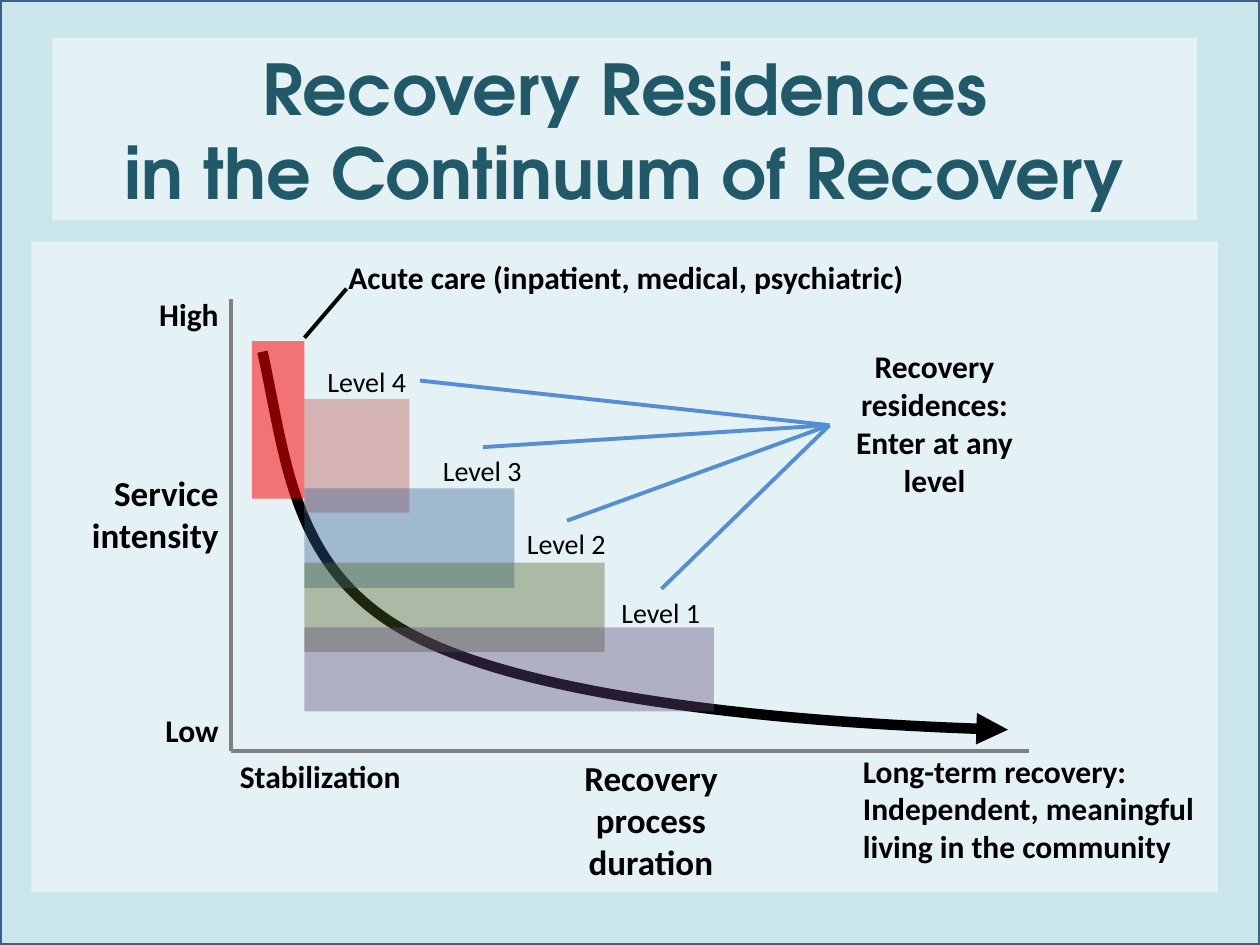
from dataclasses import dataclass

from lxml import etree
from pptx import Presentation
from pptx.dml.color import RGBColor
from pptx.enum.dml import MSO_FILL
from pptx.enum.shapes import MSO_CONNECTOR, MSO_SHAPE
from pptx.enum.text import MSO_ANCHOR, MSO_AUTO_SIZE, PP_ALIGN
from pptx.oxml.ns import qn
from pptx.util import Pt

LEFT, CENTER, RIGHT = PP_ALIGN.LEFT, PP_ALIGN.CENTER, PP_ALIGN.RIGHT
RECTANGLE, STRAIGHT = MSO_SHAPE.RECTANGLE, MSO_CONNECTOR.STRAIGHT
TITLE_ONLY_LAYOUT = 5
LEFT_SIDE = 1


@dataclass(frozen=True)
class Theme:
    title_font: str = "TeX Gyre Adventor"
    body_font: str = "Calibri"
    title_size: float = 40
    axis_size: float = 20
    label_size: float = 18
    level_size: float = 16
    background: str = "CAE6EB"
    frame: str = "3A5F8C"
    panel: str = "FFFFFF"
    title: str = "215968"
    text: str = "000000"
    axis: str = "808080"
    callout: str = "558ED5"
    acute: str = "FF0000"
    panel_opacity: int = 50
    bar_opacity: int = 39
    acute_opacity: int = 52
    line_width: float = 2.25
    curve_width: float = 6


@dataclass(frozen=True)
class Box:
    left: float
    top: float
    width: float
    height: float

    def lengths(self) -> tuple:
        return Pt(self.left), Pt(self.top), Pt(self.width), Pt(self.height)


@dataclass(frozen=True)
class Level:
    name: str
    color: str
    top: float
    width: float
    height: float
    label_at: tuple[float, float]
    callout_to: tuple[float, float]


@dataclass(frozen=True)
class Label:
    text: str
    box: Box
    align: PP_ALIGN
    size: float


THEME = Theme()
BARS_LEFT = 174
AXIS_X, AXIS_Y = 132, 429
HUB = (474, 243)
LEVELS = [
    Level("Level 4", "C0504D", 228, 60, 65, (180, 204.5), (240, 217.5)),
    Level("Level 3", "376092", 279, 120, 57, (246, 255.5), (276, 255.5)),
    Level("Level 2", "4F6228", 321.5, 171.5, 51, (294, 297.5), (324, 297.5)),
    Level("Level 1", "604A7B", 358.5, 234, 48, (348, 336.5), (378, 336.5)),
]
LABELS = [
    Label("Long-term recovery:\nIndependent, meaningful living in the community",
          Box(486, 426, 204, 73), LEFT, THEME.label_size),
    Label("Service intensity", Box(36, 266, 96, 55), RIGHT, THEME.axis_size),
    Label("Recovery process duration", Box(300, AXIS_Y, 144, 80), CENTER, THEME.axis_size),
    Label("High", Box(78, 165, 54, 29), RIGHT, THEME.label_size),
    Label("Low", Box(78, 403, 54, 29), RIGHT, THEME.label_size),
    Label("Stabilization", Box(126, AXIS_Y, 114, 29), CENTER, THEME.label_size),
    Label("Acute care (inpatient, medical, psychiatric)",
          Box(192, 144, 354, 29), LEFT, THEME.label_size),
]
# Start point, then two control points and an end point per Bézier segment
CURVE = [(150, 201), (164, 265), (167, 328), (238, 364),
         (309, 400), (466, 414), (576, 417)]


def rgb(color: str) -> RGBColor:
    return RGBColor.from_string(color)


def fill_translucent(shape, color: str, opacity: int) -> None:
    shape.fill.solid()
    shape.fill.fore_color.rgb = rgb(color)
    color_element = shape.fill._xPr.find(qn("a:solidFill"))[0]
    etree.SubElement(color_element, qn("a:alpha")).set("val", str(opacity * 1000))


def add_block(slide, box: Box, color: str, opacity: int) -> None:
    block = slide.shapes.add_shape(RECTANGLE, *box.lengths())
    block.shadow.inherit = False
    block.line.fill.background()
    fill_translucent(block, color, opacity)


def write(frame, text: str, *, size: float, align=LEFT, bold=True,
          font=THEME.body_font, color=THEME.text) -> None:
    frame.word_wrap = True
    frame.text = text
    for paragraph in frame.paragraphs:
        paragraph.alignment = align
        paragraph.font.name = font
        paragraph.font.size = Pt(size)
        paragraph.font.bold = bold
        paragraph.font.color.rgb = rgb(color)


def add_label(slide, text: str, box: Box, **text_format):
    label = slide.shapes.add_textbox(*box.lengths())
    write(label.text_frame, text, **text_format)
    return label


def add_line(slide, start: tuple, end: tuple, color: str):
    line = slide.shapes.add_connector(STRAIGHT, *map(Pt, start + end))
    line.line.color.rgb = rgb(color)
    line.line.width = Pt(THEME.line_width)
    etree.SubElement(line._element.spPr, qn("a:effectLst"))
    return line


def add_curve(slide, points: list) -> None:
    """Draw an arrow along Bézier segments, grouping each three points into one."""
    builder = slide.shapes.build_freeform(*map(Pt, points[0]))
    builder.add_line_segments([tuple(map(Pt, p)) for p in points[1:]], close=False)
    curve = builder.convert_to_shape()
    curve.shadow.inherit = False
    curve.fill.background()
    curve.line.color.rgb = rgb(THEME.text)
    curve.line.width = Pt(THEME.curve_width)
    outline = curve._element.spPr.find(qn("a:ln"))
    etree.SubElement(outline, qn("a:tailEnd")).set("type", "triangle")
    route = curve._element.spPr.find(".//" + qn("a:path"))
    steps = route.findall(qn("a:lnTo"))
    for first in range(0, len(steps), 3):
        bezier = etree.SubElement(route, qn("a:cubicBezTo"))
        for step in steps[first:first + 3]:
            bezier.append(step[0])
            route.remove(step)


def add_title(slide) -> None:
    title = slide.shapes.title
    title.left, title.top, title.width, title.height = Box(30, 21.5, 654, 104.5).lengths()
    fill_translucent(title, THEME.panel, THEME.panel_opacity)
    write(title.text_frame, "Recovery Residences\vin the Continuum of Recovery",
          size=THEME.title_size, align=CENTER, font=THEME.title_font, color=THEME.title)
    title.text_frame.auto_size = MSO_AUTO_SIZE.NONE
    title.text_frame.vertical_anchor = MSO_ANCHOR.MIDDLE


def add_backdrop(slide) -> None:
    slide.background.fill.solid()
    slide.background.fill.fore_color.rgb = rgb(THEME.background)
    frame = slide.shapes.add_shape(RECTANGLE, *Box(0, 0, 720, 540).lengths())
    frame.shadow.inherit = False
    frame.fill.background()
    frame.line.color.rgb = rgb(THEME.frame)
    frame.line.width = Pt(2)
    add_block(slide, Box(18, 138, 678, 372), THEME.panel, THEME.panel_opacity)


def add_levels(slide) -> None:
    residences = add_label(slide, "Recovery residences: Enter at any level",
                           Box(HUB[0], HUB[1] - 48, 120, 96),
                           size=THEME.label_size, align=CENTER)
    for level in LEVELS:
        add_block(slide, Box(BARS_LEFT, level.top, level.width, level.height),
                  level.color, THEME.bar_opacity)
    for level in LEVELS:
        add_label(slide, level.name, Box(*level.label_at, 60, 26.5),
                  size=THEME.level_size, bold=False)
        callout = add_line(slide, HUB, level.callout_to, THEME.callout)
        callout.begin_connect(residences, LEFT_SIDE)


def main() -> None:
    deck = Presentation()
    deck.slide_width, deck.slide_height = Pt(720), Pt(540)
    slide = deck.slides.add_slide(deck.slide_layouts[TITLE_ONLY_LAYOUT])
    add_backdrop(slide)
    add_title(slide)
    add_curve(slide, CURVE)
    add_line(slide, (AXIS_X, 171), (AXIS_X, AXIS_Y), THEME.axis)
    add_line(slide, (AXIS_X, AXIS_Y), (588, AXIS_Y), THEME.axis)
    add_levels(slide)
    add_block(slide, Box(144, 195, 30, 90), THEME.acute, THEME.acute_opacity)
    add_line(slide, (198, 165), (BARS_LEFT, 193), THEME.text)
    for label in LABELS:
        add_label(slide, label.text, label.box, size=label.size, align=label.align)
    deck.save("out.pptx")


if __name__ == "__main__":
    main()
